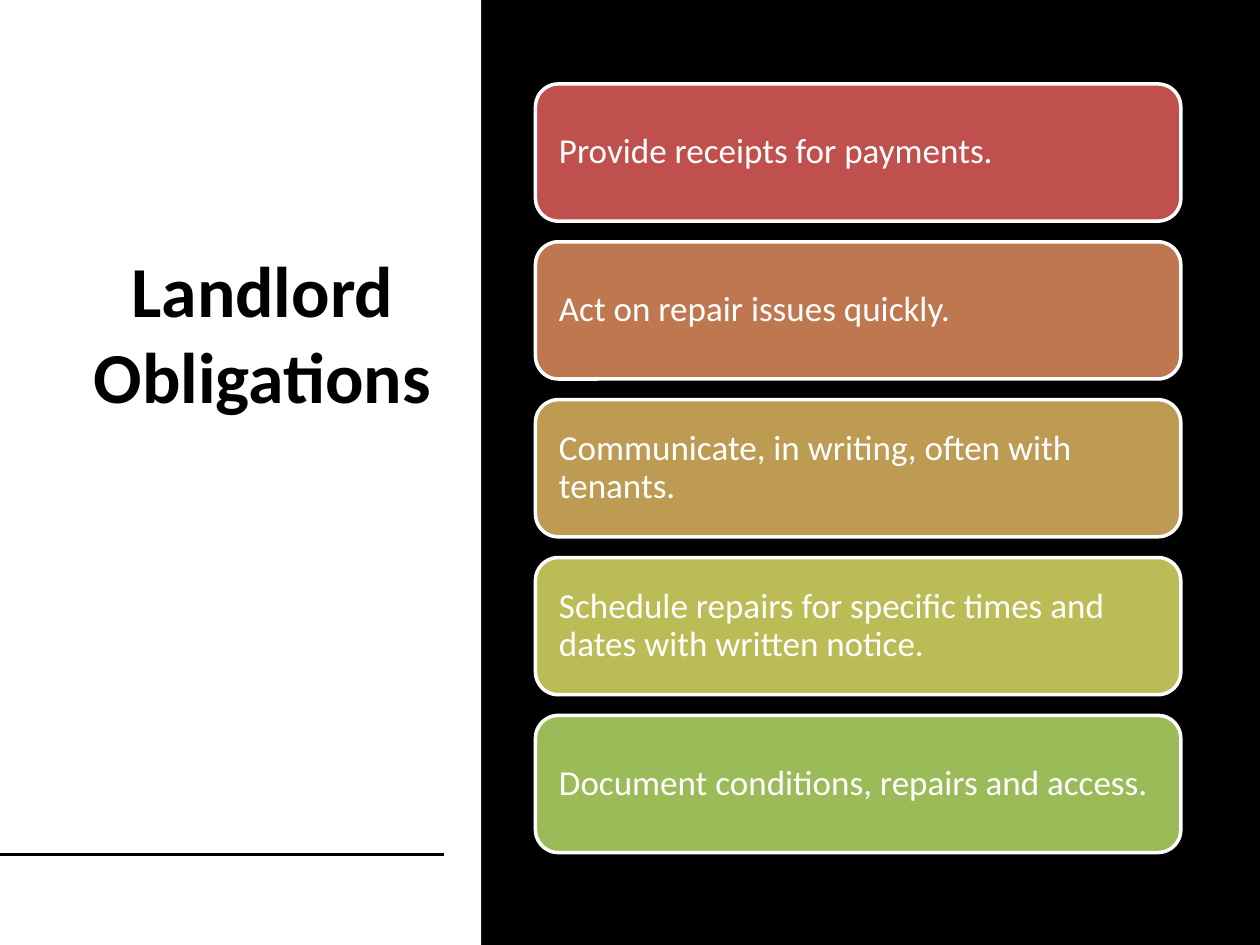
import pptx
import pptx.dml.color
import pptx.enum.shapes
import pptx.enum.text
import pptx.oxml.ns
import pptx.util
from lxml import etree

Pt = pptx.util.Pt
SHAPES = pptx.enum.shapes.MSO_SHAPE
ALIGN = pptx.enum.text.PP_ALIGN
MIDDLE = pptx.enum.text.MSO_ANCHOR.MIDDLE

TITLE = "Landlord Obligations"
OBLIGATIONS = [
    ("Provide receipts for payments.", "C0504D"),
    ("Act on repair issues quickly.", "BF7750"),
    ("Communicate, in writing, often with tenants.", "BD9B53"),
    ("Schedule repairs for specific times and dates with written notice.", "BCBC56"),
    ("Document conditions, repairs and access.", "9BBB59"),
]
BLACK, WHITE = "000000", "FFFFFF"
SLIDE_WIDTH, SLIDE_HEIGHT = 720, 540
PANEL_WIDTH = 275
BAR_LEFT, BAR_TOP, BAR_WIDTH, BAR_HEIGHT = 306, 48, 368.8, 78.4
BAR_PITCH = 90.2
BAR_INSET = 9.6


def color(value):
    return pptx.dml.color.RGBColor.from_string(value)


def add_block(slide, kind, left, top, width, height, fill, line=None):
    shape = slide.shapes.add_shape(kind, Pt(left), Pt(top), Pt(width), Pt(height))
    shape.shadow.inherit = False
    shape.fill.solid()
    shape.fill.fore_color.rgb = color(fill)
    if line:
        shape.line.color.rgb = color(line)
        shape.line.width = Pt(2)
    else:
        shape.line.fill.background()
    return shape


def write(shape, text, size, font_color, alignment, insets, bold=False):
    """Fill the shape with one paragraph; insets are left, top, right, bottom."""
    frame = shape.text_frame
    frame.word_wrap = True
    frame.vertical_anchor = MIDDLE
    (frame.margin_left, frame.margin_top,
     frame.margin_right, frame.margin_bottom) = map(Pt, insets)
    paragraph = frame.paragraphs[0]
    paragraph.text = text
    paragraph.alignment = alignment
    font = paragraph.font
    font.name, font.size, font.bold = "Calibri", Pt(size), bold
    font.color.rgb = color(font_color)
    return paragraph


presentation = pptx.Presentation()
presentation.slide_width = Pt(SLIDE_WIDTH)
presentation.slide_height = Pt(SLIDE_HEIGHT)
slide = presentation.slides.add_slide(presentation.slide_layouts[6])
slide.background.fill.solid()
slide.background.fill.fore_color.rgb = color(BLACK)

add_block(slide, SHAPES.RECTANGLE, 0, 0, PANEL_WIDTH, SLIDE_HEIGHT, WHITE)

# The deep bottom inset lifts the title above the middle of its box.
title = slide.shapes.add_textbox(Pt(44.6), Pt(44), Pt(211), Pt(390))
write(title, TITLE, 41, BLACK, ALIGN.CENTER, (7.2, 3.6, 7.2, 102), bold=True)

rule = slide.shapes.add_connector(
    pptx.enum.shapes.MSO_CONNECTOR.STRAIGHT, Pt(0), Pt(488.2), Pt(253.6), Pt(488.2))
rule.line.color.rgb = color(BLACK)
rule.line.width = Pt(2)
etree.SubElement(rule._element.spPr, pptx.oxml.ns.qn("a:effectLst"))

for index, (text, fill) in enumerate(OBLIGATIONS):
    bar = add_block(slide, SHAPES.ROUNDED_RECTANGLE, BAR_LEFT,
                    BAR_TOP + index * BAR_PITCH, BAR_WIDTH, BAR_HEIGHT, fill, WHITE)
    paragraph = write(bar, text, 20, WHITE, ALIGN.LEFT, [BAR_INSET] * 4)
    paragraph.line_spacing = 0.9

presentation.save("out.pptx")
